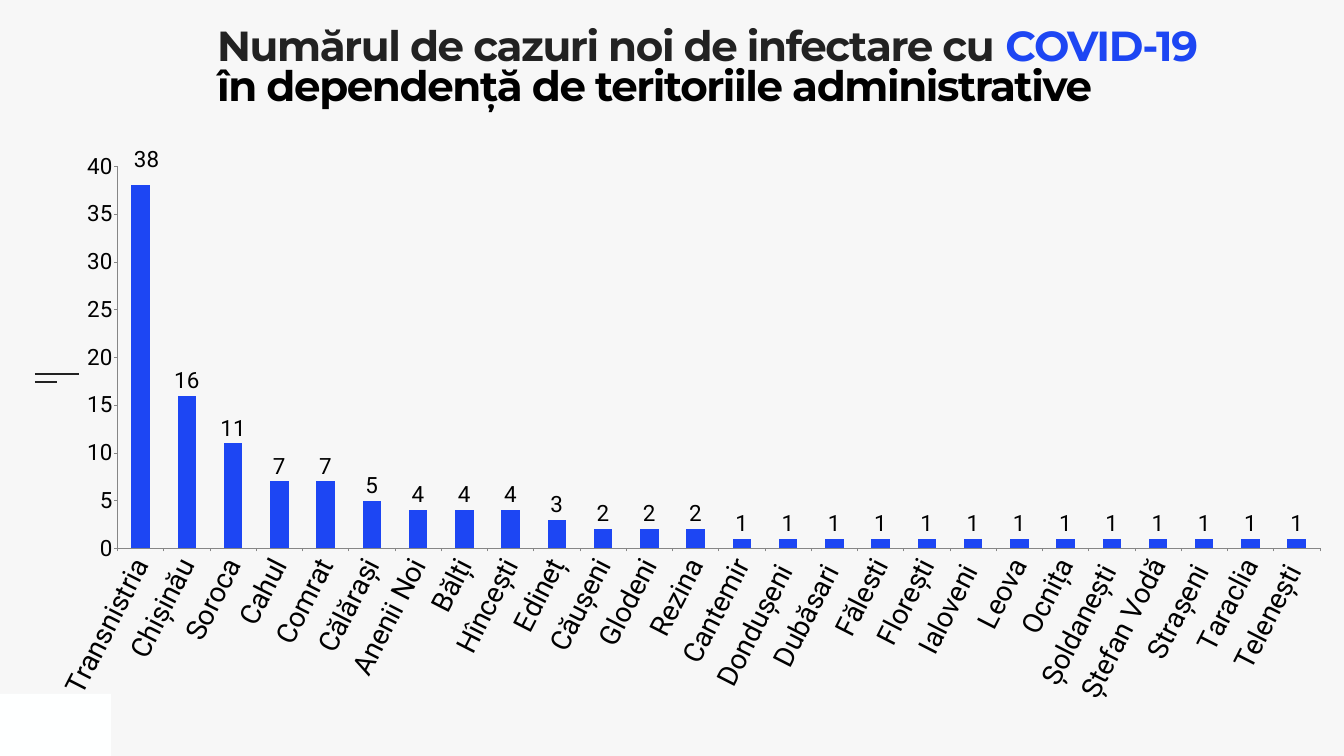
from lxml import etree
from pptx import Presentation
from pptx.chart.data import CategoryChartData as Data
from pptx.dml.color import RGBColor as RGB
from pptx.enum.chart import XL_CHART_TYPE as Kind, XL_LABEL_POSITION as Spot
from pptx.enum.chart import XL_TICK_MARK as Tick
from pptx.enum.shapes import MSO_CONNECTOR as Conn, MSO_SHAPE as Shape
from pptx.enum.text import MSO_ANCHOR as Anchor, MSO_AUTO_SIZE as Auto, PP_ALIGN as Align
from pptx.oxml import parse_xml
from pptx.oxml.ns import nsdecls, qn
from pptx.util import Inches, Pt

WIDE, HIGH = 26.67, 15
WIDTH, HEIGHT = 25.17, 11.85  # chart
TILT = -63
INK = {"back": "F7F7F7", "white": "FEFFFF", "dark": "222222",
       "blue": "1D46F3", "black": "000000", "axis": "868686"}
CASES = {
    "Transnistria": 38, "Chișinău": 16, "Soroca": 11, "Cahul": 7, "Comrat": 7,
    "Călărași": 5, "Anenii Noi": 4, "Bălți": 4, "Hîncești": 4, "Edineț": 3,
    "Căușeni": 2, "Glodeni": 2, "Rezina": 2,
}
SINGLE = ["Cantemir", "Dondușeni ", "Dubăsari ", "Fălesti", "Florești",
          "Ialoveni ", "Leova", "Ocnița", "Șoldanești ", "Ștefan Vodă",
          "Strașeni ", "Taraclia", "Telenești "]


def ink(name):
    return RGB.from_string(INK[name])


def style(font, size, face="Roboto", color="black", bold=False):
    font.size, font.name, font.bold = Pt(size), face, bold
    font.color.rgb = ink(color)


def write(para, text, gap=0, **look):
    """Add a run; gap is the letter spacing in points."""
    run = para.add_run()
    run.text = text
    style(run.font, **look)
    run.font._element.set("spc", str(gap * 100))


def place(item, x, y, w, h):
    item.left, item.top = Inches(x), Inches(y)
    item.width, item.height = Inches(w), Inches(h)


def add_title(slide, lines):
    title = slide.shapes.title
    place(title, 4.31, 0.58, 20.02, 2.73)
    frame = title.text_frame
    frame.word_wrap, frame.auto_size = True, Auto.NONE
    frame.vertical_anchor = Anchor.TOP
    frame.margin_left = frame.margin_right = 0
    frame.margin_top = frame.margin_bottom = 0
    for i, parts in enumerate(lines):
        para = frame.add_paragraph() if i else frame.paragraphs[0]
        para.alignment, para.line_spacing = Align.LEFT, 0.8
        para.space_before = Pt(0)
        for text, color in parts:
            write(para, text, gap=-2, size=60, face="Montserrat",
                  color=color, bold=True)


def add_block(slide, x, y, w, h):
    block = slide.shapes.add_shape(
        Shape.RECTANGLE, Inches(x), Inches(y), Inches(w), Inches(h))
    block.shadow.inherit = False
    block.fill.solid()
    block.fill.fore_color.rgb = ink("white")
    block.line.fill.background()


def add_rule(slide, x, y, w):
    rule = slide.shapes.add_connector(
        Conn.STRAIGHT, Inches(x), Inches(y), Inches(x + w), Inches(y))
    rule.line.color.rgb, rule.line.width = ink("dark"), Pt(3)
    etree.SubElement(rule._element.spPr, qn("a:effectLst"))


def layout(inner=False, **sides):
    """Manual chart layout; sides are inches inside the chart."""
    tags = ""
    if inner:
        tags = ('<c:layoutTarget val="inner"/><c:xMode val="edge"/>'
                '<c:yMode val="edge"/>')
    for side, size in sides.items():
        share = size / (WIDTH if side in "xw" else HEIGHT)
        tags += f'<c:{side} val="{share:.4f}"/>'
    return parse_xml(f'<c:layout {nsdecls("c")}><c:manualLayout>{tags}'
                     '</c:manualLayout></c:layout>')


def set_axis(axis, size):
    axis.has_major_gridlines = False
    axis.major_tick_mark, axis.minor_tick_mark = Tick.OUTSIDE, Tick.NONE
    axis.format.line.color.rgb = ink("axis")
    axis.format.line.width = Pt(0.75)
    style(axis.tick_labels.font, size)


def set_labels(series):
    labels = series.data_labels
    labels.show_value, labels.position = True, Spot.OUTSIDE_END
    style(labels.font, 32)
    first = series.points[0].data_label
    style(first.font, 32)
    first.position = Spot.OUTSIDE_END
    mark = labels._element.find(qn("c:dLbl"))
    mark.find(qn("c:idx")).addnext(layout(x=0.12, y=-0.21))


def add_chart(slide, cases):
    data = Data()
    data.categories = list(cases)
    data.add_series("Series 1", list(cases.values()))
    chart = slide.shapes.add_chart(
        Kind.COLUMN_CLUSTERED, Inches(1.1), Inches(2.68),
        Inches(WIDTH), Inches(HEIGHT), data).chart
    chart.has_legend = chart.has_title = False
    style(chart.font, 40)
    set_axis(chart.category_axis, 40)
    turn = chart.category_axis._element.find(qn("c:txPr")).find(qn("a:bodyPr"))
    turn.set("rot", str(TILT * 60000))
    turn.set("vert", "horz")
    scale = chart.value_axis
    set_axis(scale, 32)
    scale.minimum_scale, scale.maximum_scale, scale.major_unit = 0, 40, 5
    plot = chart.plots[0]
    plot.gap_width, plot.vary_by_categories = 150, False
    bars = plot.series[0]
    bars.format.fill.solid()
    bars.format.fill.fore_color.rgb = ink("blue")
    set_labels(bars)
    area = chart._chartSpace.chart.plotArea
    for old in area.findall(qn("c:layout")):
        area.remove(old)
    area.insert(0, layout(True, x=1.23, y=0.62, w=23.86, h=7.58))


def main():
    deck = Presentation()
    deck.slide_width, deck.slide_height = Inches(WIDE), Inches(HIGH)
    slide = deck.slides.add_slide(deck.slide_layouts[5])
    slide.background.fill.solid()
    slide.background.fill.fore_color.rgb = ink("back")
    add_block(slide, 0, 13.77, 2.2, 1.23)
    for y, w in ((7.42, 0.88), (7.58, 0.44)):
        add_rule(slide, 0.69, y, w)
    add_title(slide, [
        [("Numărul de cazuri noi de infectare cu ", "dark"),
         ("COVID-19", "blue")],
        [("în dependență de teritoriile administrative", "black")],
    ])
    add_chart(slide, CASES | dict.fromkeys(SINGLE, 1))
    deck.save("out.pptx")


if __name__ == "__main__":
    main()
